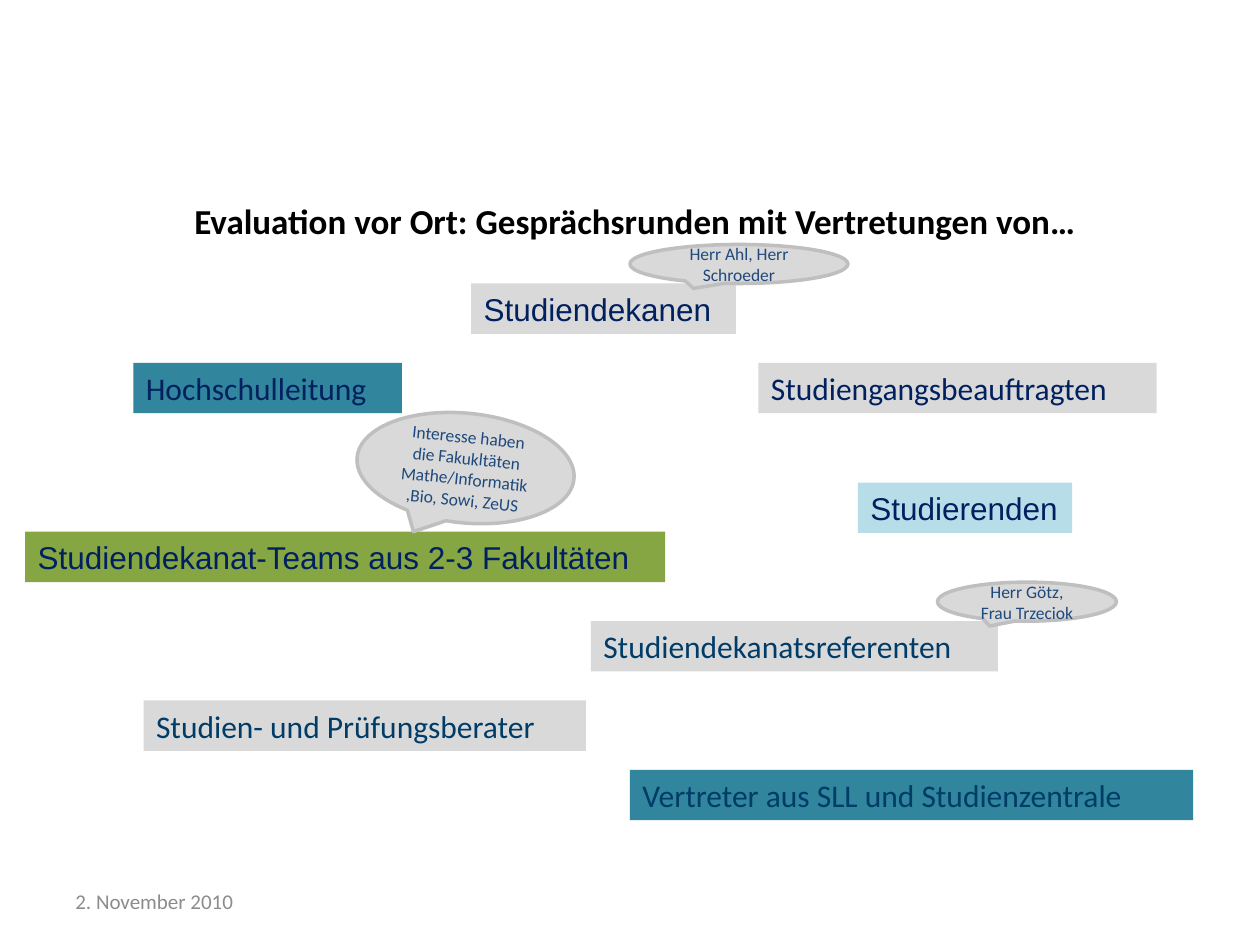
"""Build a slide naming the groups met in the on-site evaluation talks."""
from dataclasses import dataclass

from pptx import Presentation
from pptx.dml.color import RGBColor
from pptx.enum.shapes import MSO_SHAPE as Shape
from pptx.enum.text import MSO_ANCHOR as Anchor, MSO_AUTO_SIZE as AutoSize, PP_ALIGN as Align
from pptx.util import Inches, Pt

COLORS = {
    "black": "000000", "muted": "8C8C8C", "navy": "002060", "deep": "003C68",
    "blue": "1F497D", "teal": "31859C", "grey": "D9D9D9", "green": "86A644",
    "sky": "B7DEE8", "border": "BFBFBF",
}


@dataclass
class Group:
    """A labelled box for one group."""
    text: str
    left: float
    top: float
    width: float
    fill: str = "grey"
    color: str = "navy"
    font: str = "Calibri"


@dataclass
class Callout:
    """A speech bubble attached to a group."""
    text: str
    left: float
    top: float
    width: float
    height: float
    rotation: float = 0


GROUPS = [
    Group("Hochschulleitung", 1.06, 2.88, 2.13, "teal"),
    Group("Studiengangsbeauftragten", 6.02, 2.88, 3.16),
    Group("Studiendekanen", 3.74, 2.25, 2.1, font="Arial"),
    Group("Studiendekanat-Teams aus 2-3 Fakultäten", 0.2, 4.22, 5.08, "green", font="Arial"),
    Group("Studierenden", 6.81, 3.83, 1.7, "sky", font="Arial"),
    Group("Studien- und Prüfungsberater", 1.14, 5.56, 3.51, color="deep"),
    Group("Studiendekanatsreferenten", 4.69, 4.93, 3.23, color="deep"),
    Group("Vertreter aus SLL und Studienzentrale", 5, 6.11, 4.47, "teal", "deep"),
]
CALLOUTS = [
    Callout("Interesse haben die Fakukltäten Mathe/Informatik,Bio, Sowi, ZeUS",
            2.83, 3.28, 1.73, 0.87, 5.8),
    Callout("Herr Ahl, Herr Schroeder", 5, 1.94, 1.73, 0.31),
    Callout("Herr Götz, Frau Trzeciok", 7.44, 4.62, 1.42, 0.31),
]


def rgb(name: str) -> RGBColor:
    """Return the named colour."""
    return RGBColor.from_string(COLORS[name])


def write(sp, text: str, size: int, color: str, font: str = "Calibri", bold: bool = False,
          align: Align = Align.LEFT, anchor: Anchor = Anchor.MIDDLE) -> None:
    """Put one formatted paragraph into a shape."""
    tf = sp.text_frame
    frame = {"word_wrap": True, "auto_size": AutoSize.NONE, "vertical_anchor": anchor}
    for name, value in frame.items():
        setattr(tf, name, value)
    p = tf.paragraphs[0]
    p.alignment = align
    r = p.add_run()
    r.text = text
    for name, value in {"name": font, "size": Pt(size), "bold": bold}.items():
        setattr(r.font, name, value)
    r.font.color.rgb = rgb(color)


def add_group(slide, group: Group) -> None:
    """Draw the box of a group."""
    sp = slide.shapes.add_textbox(Inches(group.left), Inches(group.top),
                                  Inches(group.width), Inches(0.4))
    sp.fill.solid()
    sp.fill.fore_color.rgb = rgb(group.fill)
    write(sp, group.text, 18, group.color, group.font, anchor=Anchor.TOP)
    sp.text_frame.margin_right = Inches(0.05)


def add_callout(slide, callout: Callout) -> None:
    """Draw a speech bubble."""
    sp = slide.shapes.add_shape(Shape.OVAL_CALLOUT, Inches(callout.left), Inches(callout.top),
                                Inches(callout.width), Inches(callout.height))
    sp.rotation = callout.rotation
    sp.shadow.inherit = False
    sp.fill.solid()
    sp.fill.fore_color.rgb = rgb("grey")
    sp.line.color.rgb = rgb("border")
    sp.line.width = Pt(2)
    write(sp, callout.text, 10, "blue", align=Align.CENTER)


def main() -> None:
    """Build and save the slide."""
    prs = Presentation()
    prs.slide_width, prs.slide_height = Inches(10), Inches(7.5)
    slide = prs.slides.add_slide(prs.slide_layouts[5])
    title = slide.shapes.title
    bounds = {"left": 0.75, "top": 1.5, "width": 8.58, "height": 0.5}
    for name, value in bounds.items():
        setattr(title, name, Inches(value))
    write(title, "Evaluation vor Ort: Gesprächsrunden mit Vertretungen von…",
          20, "black", bold=True, align=Align.CENTER)
    date = slide.shapes.add_textbox(Inches(0.5), Inches(6.95), Inches(2.33), Inches(0.4))
    write(date, "2. November 2010", 12, "muted")
    for group in GROUPS:
        add_group(slide, group)
    for callout in CALLOUTS:
        add_callout(slide, callout)
    prs.save("out.pptx")


if __name__ == "__main__":
    main()
